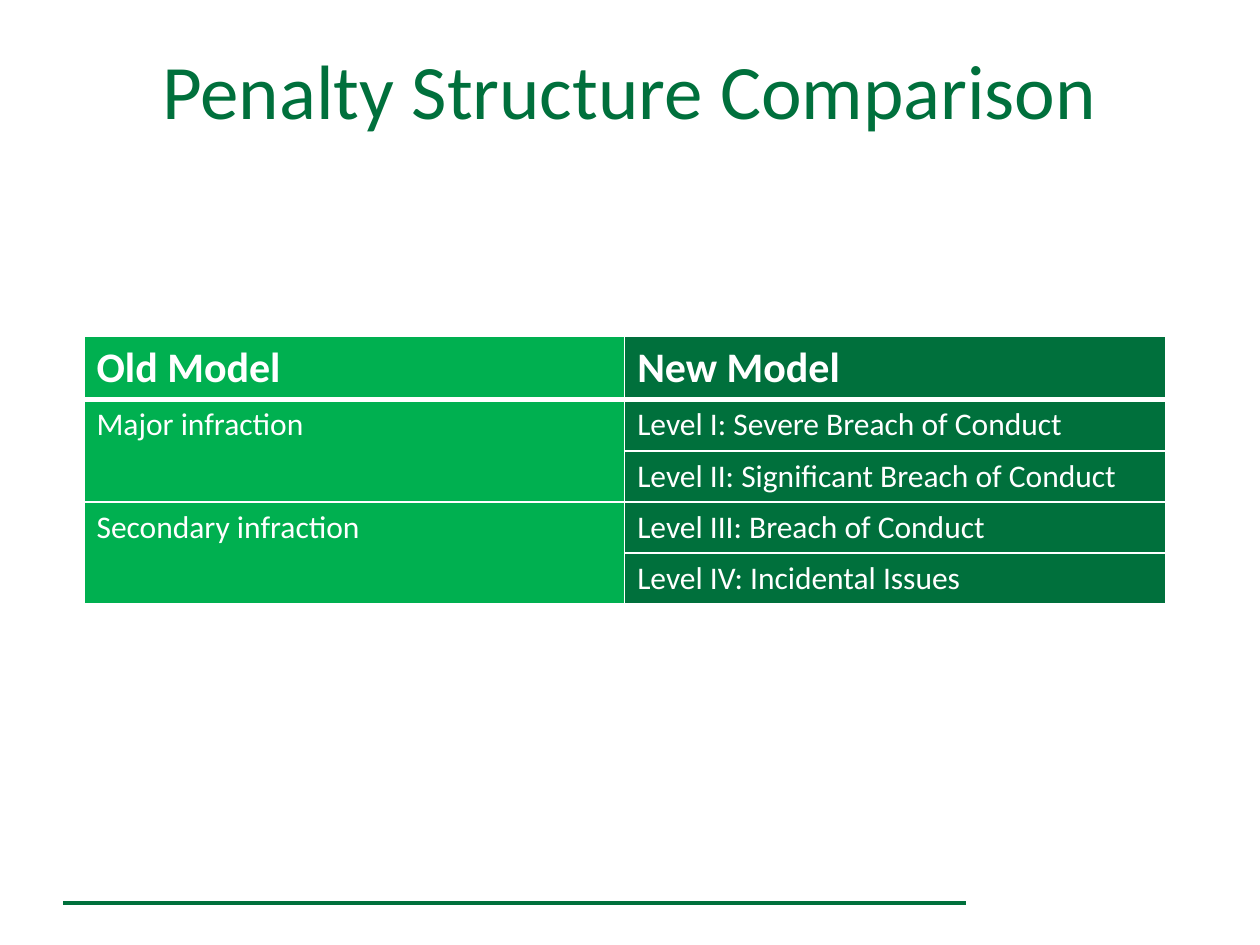
from lxml.etree import SubElement
from pptx import Presentation
from pptx.dml.color import RGBColor
from pptx.enum.shapes import MSO_CONNECTOR
from pptx.enum.text import MSO_ANCHOR, PP_ALIGN
from pptx.oxml.ns import qn
from pptx.util import Pt

COLORS = {"dark": "00703C", "light": "00B050", "white": "FFFFFF"}
FONT = "Calibri"
ROWS = [
    ("Old Model", "New Model"),
    ("Major infraction", "Level I: Severe Breach of Conduct"),
    ("", "Level II: Significant Breach of Conduct"),
    ("Secondary infraction", "Level III: Breach of Conduct"),
    ("", "Level IV: Incidental Issues"),
]


def color(name):
    """Return the named colour."""
    return RGBColor.from_string(COLORS[name])


def style_font(font, size, name, bold=False):
    """Set the typeface, size, colour and weight of a font."""
    font.name, font.size, font.bold = FONT, Pt(size), bold
    font.color.rgb = color(name)


def add_title(page, left, top, width, height):
    """Place the centred slide title."""
    box = page.shapes.add_textbox(Pt(left), Pt(top), Pt(width), Pt(height))
    frame = box.text_frame
    frame.word_wrap = True
    frame.vertical_anchor = MSO_ANCHOR.MIDDLE
    frame.text = "Penalty Structure Comparison"
    para = frame.paragraphs[0]
    para.alignment = PP_ALIGN.CENTER
    style_font(para.runs[0].font, 44, "dark")


def add_borders(cell, row):
    """Draw white cell borders, with a thick one below the header row."""
    widths = {"L": 1, "R": 1, "T": 3 if row == 1 else 1, "B": 3 if row == 0 else 1}
    properties = cell._tc.get_or_add_tcPr()
    for side, width in widths.items():
        line = SubElement(properties, qn(f"a:ln{side}"), w=str(Pt(width)))
        fill = SubElement(line, qn("a:solidFill"))
        SubElement(fill, qn("a:srgbClr"), val=COLORS["white"])


def add_comparison(page, left, top, width, header_height, row_height):
    """Place the table that maps old infractions to new levels."""
    heights = [header_height] + [row_height] * (len(ROWS) - 1)
    table = page.shapes.add_table(
        len(ROWS), 2, Pt(left), Pt(top), Pt(width), Pt(sum(heights))
    ).table
    table.horz_banding = False
    for column in table.columns:
        column.width = Pt(width / 2)
    for row, (height, texts) in enumerate(zip(heights, ROWS)):
        table.rows[row].height = Pt(height)
        for column, text in enumerate(texts):
            cell = table.cell(row, column)
            add_borders(cell, row)
            cell.fill.solid()
            cell.fill.fore_color.rgb = color(("light", "dark")[column])
            cell.text_frame.text = text
            para = cell.text_frame.paragraphs[0]
            style_font(para.font, 18 if row else 24, "white", row == 0)
            for span in para.runs:
                style_font(span.font, 18 if row else 24, "white", row == 0)
    for row in (1, 3):
        table.cell(row, 0).merge(table.cell(row + 1, 0))


def add_footer_rule(page, left, top, width):
    """Draw the rule along the foot of the page."""
    rule = page.shapes.add_connector(
        MSO_CONNECTOR.STRAIGHT, Pt(left), Pt(top), Pt(left + width), Pt(top)
    )
    rule.line.color.rgb = color("dark")
    rule.line.width = Pt(2.5)
    SubElement(rule._element.spPr, qn("a:effectLst"))


def main():
    """Build the slide and save the deck."""
    deck = Presentation()
    deck.slide_width, deck.slide_height = Pt(720), Pt(540)
    page = deck.slides.add_slide(deck.slide_layouts[6])
    add_footer_rule(page, 36, 516, 516)
    add_title(page, 30, 18, 660, 65.5)
    add_comparison(page, 48, 192, 618, 36.4, 29.2)
    deck.save("out.pptx")


if __name__ == "__main__":
    main()
